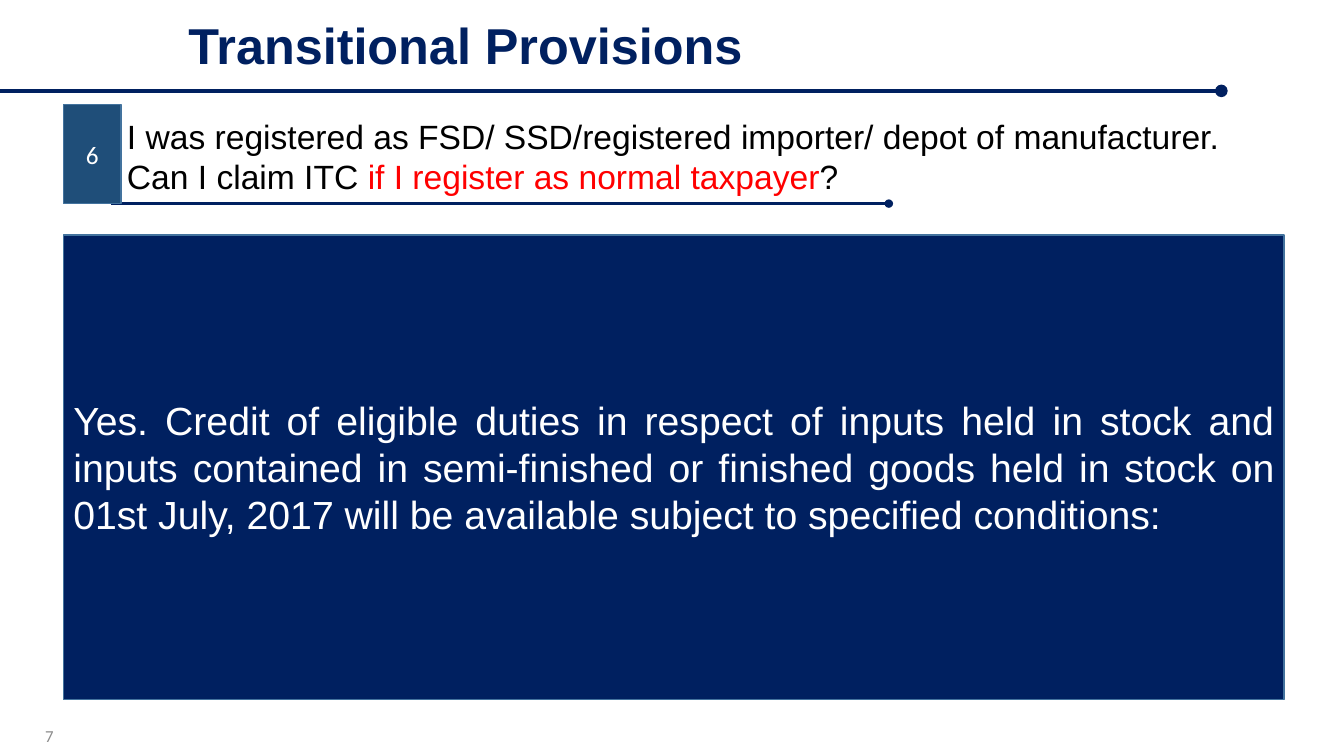
from dataclasses import dataclass

from lxml.etree import SubElement
from pptx import Presentation
from pptx.dml.color import RGBColor
from pptx.enum.shapes import MSO_CONNECTOR, MSO_SHAPE
from pptx.enum.text import MSO_ANCHOR, MSO_AUTO_SIZE, PP_ALIGN
from pptx.oxml.ns import qn
from pptx.util import Cm, Pt


@dataclass(frozen=True)
class Theme:
    navy: str = "002060"
    steel: str = "1F4E79"
    edge: str = "43739E"
    black: str = "000000"
    red: str = "FF0000"
    white: str = "FFFFFF"
    gray: str = "8C8C8C"
    sans: str = "Arial"
    plain: str = "Calibri"
    title: int = 36
    answer: int = 28
    question: int = 24
    badge: int = 18
    footer: int = 12


def apply(target, values):
    for name, value in values.items():
        setattr(target, name, value)


class Page:
    def __init__(self, slide, theme):
        self.slide = slide
        self.theme = theme

    def fill_text(self, shape, runs, size, font, align=None, bold=False, frame=None):
        body = shape.text_frame
        apply(body, {"word_wrap": True, **(frame or {})})
        para = body.paragraphs[0]
        para.alignment = align
        for text, color in runs:
            run = para.add_run()
            run.text = text
            apply(run.font, {"size": Pt(size), "name": font, "bold": bold})
            run.font.color.rgb = RGBColor.from_string(color)

    def text(self, area, runs, size, font, **style):
        shape = self.slide.shapes.add_textbox(*map(Cm, area))
        self.fill_text(shape, runs, size, font, **style)

    def block(self, area, fill, text, size, font, align):
        shape = self.slide.shapes.add_shape(MSO_SHAPE.RECTANGLE, *map(Cm, area))
        shape.shadow.inherit = False
        shape.fill.solid()
        shape.fill.fore_color.rgb = RGBColor.from_string(fill)
        shape.line.color.rgb = RGBColor.from_string(self.theme.edge)
        shape.line.width = Pt(1)
        self.fill_text(shape, [(text, self.theme.white)], size, font, align,
                       frame={"vertical_anchor": MSO_ANCHOR.MIDDLE})

    def rule(self, left, right, top, width):
        ends = map(Cm, (left, top, right, top))
        line = self.slide.shapes.add_connector(MSO_CONNECTOR.STRAIGHT, *ends)
        line.line.color.rgb = RGBColor.from_string(self.theme.navy)
        line.line.width = Pt(width)
        props = line._element.spPr
        SubElement(props.find(qn("a:ln")), qn("a:tailEnd"), type="oval")
        SubElement(props, qn("a:effectLst"))


def main():
    deck = Presentation()
    apply(deck, {"slide_width": Cm(33.87), "slide_height": Cm(19.05)})
    theme = Theme()
    page = Page(deck.slides.add_slide(deck.slide_layouts[6]), theme)
    grow = {"auto_size": MSO_AUTO_SIZE.SHAPE_TO_FIT_TEXT}

    page.rule(0, 30.78, 2.29, 3)
    page.text((4.5, 0.23, 21.11, 1.8), [("Transitional Provisions", theme.navy)],
              theme.title, theme.sans, bold=True, frame=grow)

    page.rule(2.79, 22.4, 5.13, 2)
    page.block((1.6, 2.64, 1.45, 2.49), theme.steel, "6",
               theme.badge, theme.plain, PP_ALIGN.CENTER)
    page.text((2.95, 2.79, 29.74, 2.31), [
        ("I was registered as FSD/ SSD/registered importer/ depot of manufacturer. "
         "Can I claim ITC ", theme.black),
        ("if I register as normal taxpayer", theme.red),
        ("?", theme.black),
    ], theme.question, theme.sans, frame=grow)

    page.block((1.6, 5.92, 30.76, 11.71), theme.navy,
               "Yes. Credit of eligible duties in respect of inputs held in stock and "
               "inputs contained in semi-finished or finished goods held in stock on "
               "01st July, 2017 will be available subject to specified conditions:",
               theme.answer, theme.sans, PP_ALIGN.JUSTIFY)

    page.text((-6.02, 18.03, 7.62, 1.02), [("7", theme.gray)],
              theme.footer, theme.plain, align=PP_ALIGN.RIGHT,
              frame={"vertical_anchor": MSO_ANCHOR.MIDDLE})
    deck.save("out.pptx")


if __name__ == "__main__":
    main()
